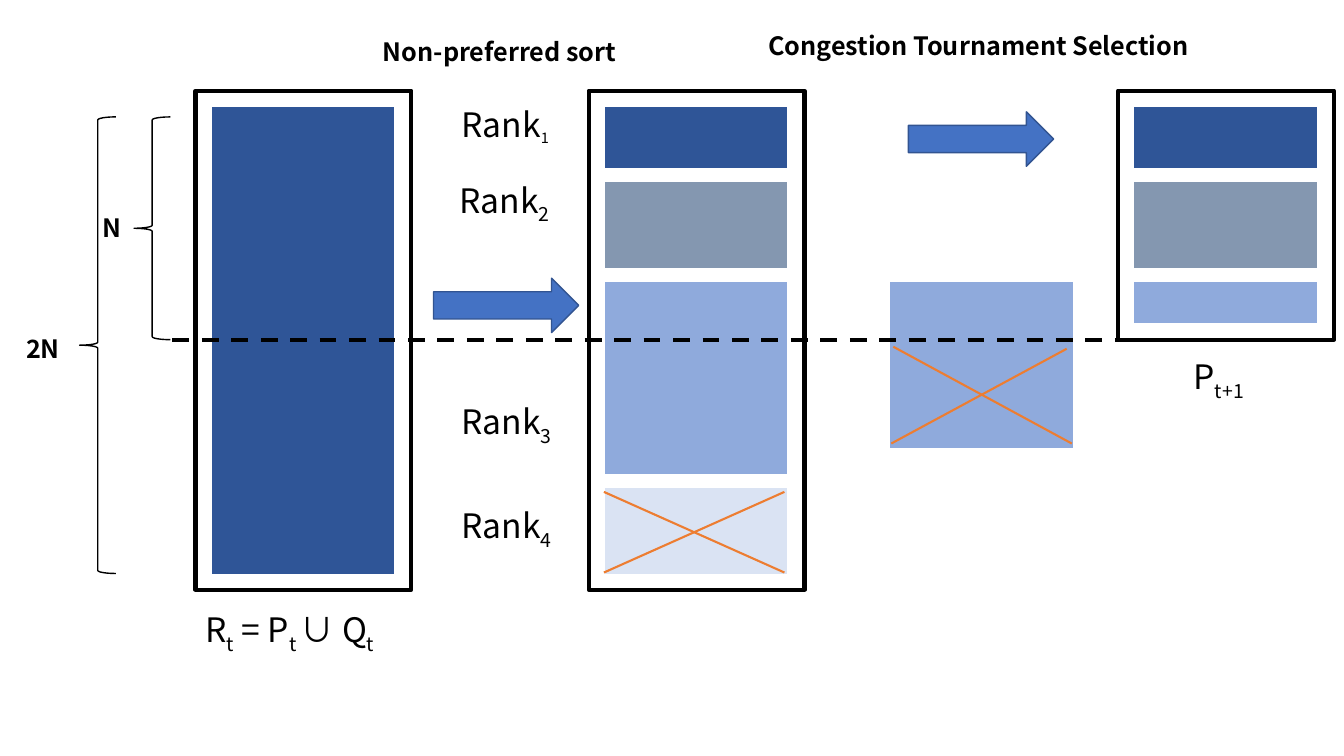
"""Build the slide on non-preferred sorting and congestion tournament selection."""
from itertools import accumulate
from lxml import etree
from pptx import Presentation
from pptx.dml.color import RGBColor
from pptx.enum.dml import MSO_LINE
from pptx.enum.shapes import MSO_CONNECTOR, MSO_SHAPE
from pptx.enum.text import MSO_ANCHOR
from pptx.oxml.ns import qn
from pptx.util import Inches, Pt

RECT, BRACE, ARROW = MSO_SHAPE.RECTANGLE, MSO_SHAPE.LEFT_BRACE, MSO_SHAPE.RIGHT_ARROW
LINE, DASH, MIDDLE = MSO_CONNECTOR.STRAIGHT, MSO_LINE.DASH, MSO_ANCHOR.MIDDLE

HUES = {"ink": "000000", "paper": "FFFFFF", "deep": "2F5597", "slate": "8497B0",
        "sky": "8FAADC", "pale": "DAE3F3", "cross": "ED7D31",
        "arrow": "4472C4", "edge": "325491"}
FONT = "Noto Sans CJK JP"
TOP, WIDE, PAD, CUT = 0.9, 2.14, 0.09, 3.37
BAR = 1.95

SORT = [("deep", 0.75), ("slate", 0.99), ("sky", 2.04), ("pale", 0.99)]
POOLS = [(1.94, 4.95, [("deep", 4.77)]), (5.84, 4.95, SORT)]
NEXT = (11.09, CUT - TOP, SORT[:2] + [("sky", 0.54)])
SPLIT = (8.76, 2.73, BAR, 1.78)
CROSSES = [[(5.99, 4.88, 7.78, 5.68), (7.78, 4.88, 5.99, 5.68)],
           [(8.86, 3.44, 10.63, 4.4), (10.58, 3.46, 8.84, 4.4)]]
BRACES = [(1.33, 1.16, 0.36, 2.21), (0.79, 1.16, 0.36, 4.53)]
ARROWS = [(4.3, 2.76, 1.44, 0.54), (9.01, 1.11, 1.44, 0.54)]
HEADS = [("N", 0.92, 2.06, 0.46), ("2N", 0.16, 3.26, 0.68),
         ("Non-preferred sort", 3.7, 0.31, 2.53),
         ("Congestion Tournament Selection", 7.52, 0.25, 4.37)]
RANKS = [(4.48, 0.99, 18), (4.46, 1.76, 24), (4.48, 3.96, 24), (4.48, 4.99, 24)]
SETS = [(["P", "t+1"], 11.74, 3.51, 0.81),
        (["R", "t", " = P", "t ", "∪ Q", "t"], 1.94, 6.02, WIDE)]


def hue(name):
    return RGBColor.from_string(HUES[name])


def stroke(line, name, width):
    line.color.rgb = hue(name)
    line.width = Pt(width)


def shape(page, kind, area, fill, edge, width):
    item = page.shapes.add_shape(kind, *map(Inches, area))
    item.shadow.inherit = False
    if fill:
        item.fill.solid()
        item.fill.fore_color.rgb = hue(fill)
    else:
        item.fill.background()
    stroke(item.line, edge, width)


def rule(page, ends, name, width):
    item = page.shapes.add_connector(LINE, *map(Inches, ends))
    etree.SubElement(item._element.spPr, qn("a:effectLst"))
    stroke(item.line, name, width)
    return item


def cross(page, pair):
    for ends in pair:
        rule(page, ends, "cross", 1.5)


def stack(page, left, high, bars):
    shape(page, RECT, (left, TOP, WIDE, high), "paper", "ink", 3)
    tops = accumulate((tall for _, tall in bars), initial=TOP + PAD)
    for (fill, tall), top in zip(bars, tops):
        shape(page, RECT, (left + PAD, top, BAR, tall), fill, "paper", 10)


def label(page, parts, area, size, bold=False, sub=None):
    frame = page.shapes.add_textbox(*map(Inches, area)).text_frame
    frame.word_wrap = True
    frame.vertical_anchor = MIDDLE
    for i, part in enumerate(parts):
        run = frame.paragraphs[0].add_run()
        run.text = part
        low = i % 2
        form = {"name": FONT, "size": Pt(sub if low and sub else size), "bold": bold}
        for key, value in form.items():
            setattr(run.font, key, value)
        run.font.color.rgb = hue("ink")
        if low:
            run.font._element.set("baseline", "-25000")


def main():
    deck = Presentation()
    deck.slide_width, deck.slide_height = Inches(13.33), Inches(7.5)
    page = deck.slides.add_slide(deck.slide_layouts[6])
    for pool in POOLS:
        stack(page, *pool)
    cross(page, CROSSES[0])
    shape(page, RECT, SPLIT, "sky", "paper", 10)
    rule(page, (1.71, CUT, 13.06, CUT), "ink", 3).line.dash_style = DASH
    stack(page, *NEXT)
    cross(page, CROSSES[1])
    for area in BRACES:
        shape(page, BRACE, area, None, "ink", 1)
    for area in ARROWS:
        shape(page, ARROW, area, "arrow", "edge", 1)
    for text, left, top, wide in HEADS:
        label(page, [text], (left, top, wide, 0.4), 18, bold=True)
    for i, (left, top, sub) in enumerate(RANKS, 1):
        label(page, ["Rank", str(i)], (left, top, 1.25, 0.5), 24, sub=sub)
    for parts, left, top, wide in SETS:
        label(page, parts, (left, top, wide, 0.5), 24)
    deck.save("out.pptx")


if __name__ == "__main__":
    main()
